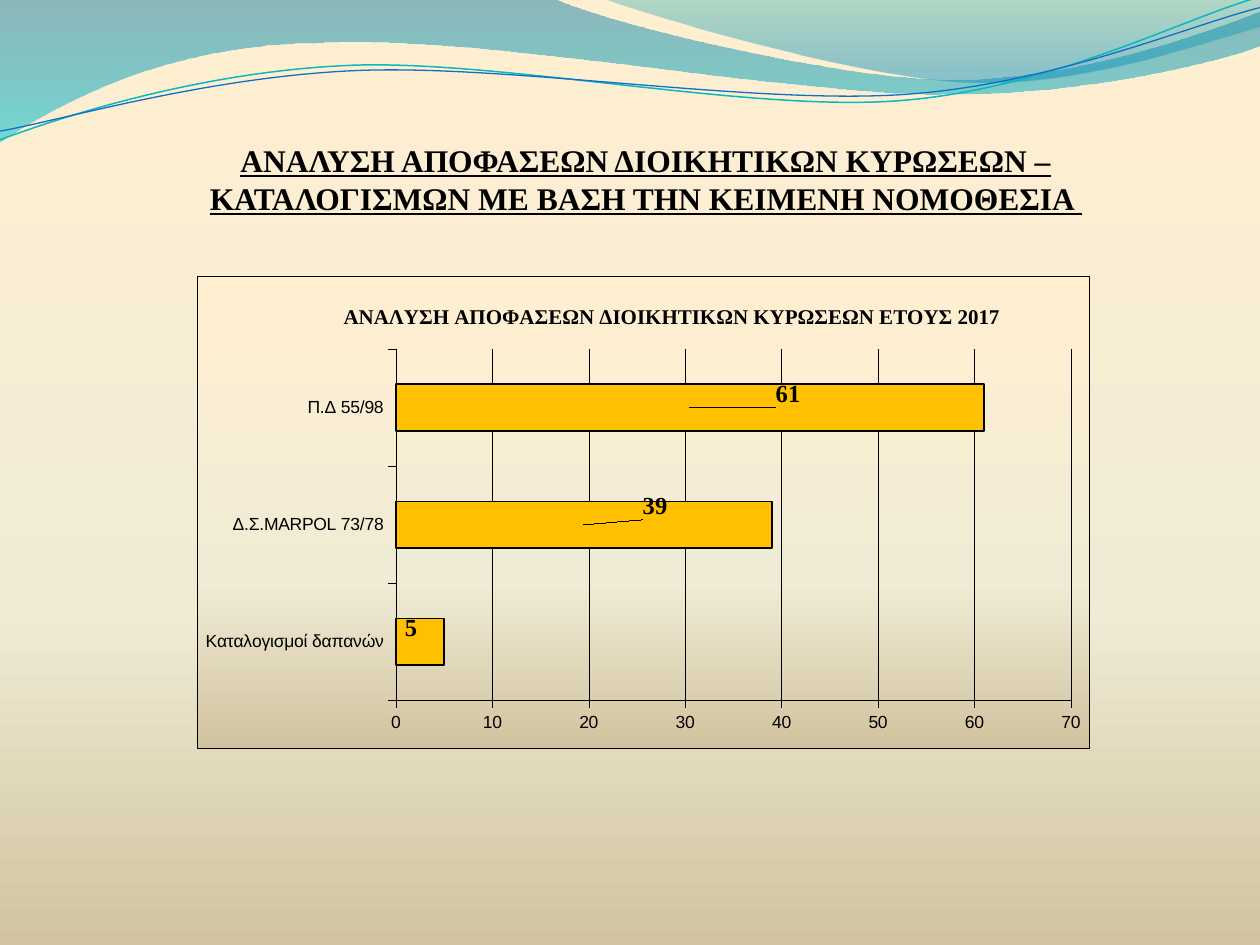
import dataclasses
import itertools
import typing

import lxml.etree
import pptx
import pptx.chart.chart
import pptx.chart.data
import pptx.dml.color
import pptx.enum.chart
import pptx.enum.text
import pptx.oxml
import pptx.oxml.ns
import pptx.slide
import pptx.util

Pt = pptx.util.Pt
qn = pptx.oxml.ns.qn


class Stop(typing.NamedTuple):
    position: int
    color: str
    opacity: int = 100


@dataclasses.dataclass(frozen=True)
class Theme:
    black: str = "000000"
    bar: str = "FFC000"
    paper: tuple = (Stop(0, "FFEFD1"), Stop(65, "F0EBD5"), Stop(100, "D1C39F"))
    teal: tuple = (Stop(0, "0074A1", 45), Stop(100, "00C6CF", 55))
    sea: tuple = (Stop(0, "00A1A9", 30), Stop(80, "008BBF", 45))
    serif: str = "Times New Roman"
    sans: str = "Arial"
    heading_size: int = 18
    label_size: int = 14
    chart_title_size: int = 12
    axis_size: int = 10
    hairline: float = 0.25


@dataclasses.dataclass(frozen=True)
class Wave:
    start: tuple
    steps: tuple
    gradient: tuple = ()
    line_color: str = ""
    line_width: float = 0


class Bar(typing.NamedTuple):
    category: str
    value: int
    label_x: float
    label_y: float


THEME = Theme()
WAVES = (
    Wave((0, -0.7), (
        (316.8, -0.7),
        (342.7, 12.2, 478.1, 45.4, 545.8, 45.4),
        (614.2, 45.4, 689.8, 18.7, 720, 6.5),
        (720.7, 25.9),
        (707.8, 31.7, 626.4, 54.7, 537.1, 54),
        (447.8, 54, 275, 20.2, 185, 24.5),
        (92.9, 25.2, 33.1, 59.8, -0.7, 81.4)), gradient=THEME.teal),
    Wave((344.9, -0.7), (
        (366.5, 7.9, 491, 44.6, 553.7, 46.8),
        (616.3, 49.7, 691.9, 23, 720, 15.1),
        (720, 0)), gradient=THEME.sea),
    Wave((0, 79.9), (
        (34.6, 67, 113.8, 41, 199.4, 37.4),
        (284.4, 33.8, 427, 64.1, 513.4, 57.6),
        (599.8, 51.1, 675.4, 10.8, 718.6, -1.4)), line_color="0AB8BF", line_width=0.85),
    Wave((0, 74.9), (
        (33.8, 69.1, 118.1, 43.9, 203.8, 40.3),
        (290.2, 36.7, 429.8, 59.8, 516.2, 54),
        (601.9, 48.2, 677.5, 15.1, 720, 4.3)), line_color="0F6FC6", line_width=0.75),
)
BARS = (
    Bar("Καταλογισμοί δαπανών", 5, -0.01, -0.03),
    Bar("Δ.Σ.MARPOL 73/78", 39, 0.08, -0.04),
    Bar("Π.Δ 55/98", 61, 0.11, -0.03),
)


def rgb(color: str) -> pptx.dml.color.RGBColor:
    """Turn a hex string into a colour."""
    return pptx.dml.color.RGBColor.from_string(color)


def format_font(font, size: float, name: str, bold: bool = False, underline: bool = False) -> None:
    """Apply black type of the given size and face."""
    font.size, font.name, font.bold, font.underline = Pt(size), name, bold, underline
    font.color.rgb = rgb(THEME.black)


def format_line(line, color: str, width: float) -> None:
    """Give a line its colour and width."""
    line.color.rgb = rgb(color)
    line.width = Pt(width)


def replace_fill(properties, stops: tuple) -> None:
    """Swap the empty fill of a properties element for a vertical gradient."""
    gradient = pptx.oxml.parse_xml(
        f'<a:gradFill {pptx.oxml.ns.nsdecls("a")} rotWithShape="1"><a:gsLst>'
        + "".join(
            f'<a:gs pos="{stop.position * 1000}"><a:srgbClr val="{stop.color}">'
            f'<a:alpha val="{stop.opacity * 1000}"/></a:srgbClr></a:gs>' for stop in stops)
        + '</a:gsLst><a:lin ang="5400000" scaled="0"/></a:gradFill>')
    properties.replace(properties.find(qn("a:noFill")), gradient)


def set_layout(parent, index: int, **values: typing.Union[str, float]) -> None:
    """Place a chart part by hand, as fractions of the chart area."""
    for existing in parent.findall(qn("c:layout")):
        parent.remove(existing)
    layout = pptx.oxml.parse_xml(f'<c:layout {pptx.oxml.ns.nsdecls("c")}><c:manualLayout/></c:layout>')
    for name, value in values.items():
        lxml.etree.SubElement(layout[0], qn(f"c:{name}")).set("val", str(value))
    parent.insert(index, layout)


def add_wave(slide: pptx.slide.Slide, wave: Wave) -> None:
    """Draw a curved band or line."""
    points = [(Pt(x), Pt(y)) for step in wave.steps for x, y in zip(step[::2], step[1::2])]
    builder = slide.shapes.build_freeform(Pt(wave.start[0]), Pt(wave.start[1]))
    builder.add_line_segments(points, close=bool(wave.gradient))
    shape = builder.convert_to_shape()
    shape.shadow.inherit = False
    segments = iter(list(shape._element.iter(qn("a:lnTo"))))
    for step in wave.steps:
        group = list(itertools.islice(segments, len(step) // 2))
        if len(group) == 3:
            curve = lxml.etree.Element(qn("a:cubicBezTo"))
            group[0].addprevious(curve)
            for segment in group:
                curve.append(segment[0])
                segment.getparent().remove(segment)
    shape.fill.background()
    if wave.gradient:
        replace_fill(shape._element.spPr, wave.gradient)
        shape.line.fill.background()
    else:
        format_line(shape.line, wave.line_color, wave.line_width)


def add_heading(slide: pptx.slide.Slide, text: str, **font_format) -> None:
    """Add the centred heading, resting on the bottom of its box."""
    frame = slide.shapes.add_textbox(Pt(65.5), Pt(55.4), Pt(607), Pt(68.4)).text_frame
    frame.word_wrap = True
    frame.vertical_anchor = pptx.enum.text.MSO_ANCHOR.BOTTOM
    frame.margin_left = frame.margin_right = frame.margin_bottom = 0
    paragraph = frame.paragraphs[0]
    paragraph.alignment = pptx.enum.text.PP_ALIGN.CENTER
    run = paragraph.add_run()
    run.text = text
    format_font(run.font, **font_format)


def format_chart_area(chart: pptx.chart.chart.Chart) -> None:
    """Give the chart its title, background, border and plot position."""
    format_font(chart.font, THEME.axis_size, THEME.sans)
    chart.has_legend = False
    chart.has_title = True
    paragraph = chart.chart_title.text_frame.paragraphs[0]
    run = paragraph.add_run()
    run.text = "ΑΝΑΛΥΣΗ ΑΠΟΦΑΣΕΩΝ ΔΙΟΙΚΗΤΙΚΩΝ ΚΥΡΩΣΕΩΝ ΕΤΟΥΣ 2017"
    format_font(run.font, THEME.chart_title_size, THEME.serif, bold=True)
    set_layout(chart.chart_title._element, 1, xMode="edge", yMode="edge", x=0.16, y=0.05)
    chart_element = chart._chartSpace.find(qn("c:chart"))
    set_layout(chart_element.find(qn("c:plotArea")), 0, layoutTarget="inner", xMode="edge",
               yMode="edge", x=0.223, y=0.155, w=0.757, h=0.744)
    area = pptx.oxml.parse_xml(
        f'<c:spPr {pptx.oxml.ns.nsdecls("c", "a")}><a:noFill/><a:ln w="{Pt(THEME.hairline)}">'
        f'<a:solidFill><a:srgbClr val="{THEME.black}"/></a:solidFill></a:ln></c:spPr>')
    replace_fill(area, THEME.paper)
    chart_element.addnext(area)


def add_decisions_chart(slide: pptx.slide.Slide) -> None:
    """Add the bar chart of decisions."""
    data = pptx.chart.data.CategoryChartData()
    data.categories = [bar.category for bar in BARS]
    data.add_series("Series 1", [bar.value for bar in BARS])
    chart = slide.shapes.add_chart(pptx.enum.chart.XL_CHART_TYPE.BAR_CLUSTERED, Pt(112.5), Pt(157.7),
                                   Pt(509.8), Pt(270), data).chart
    format_chart_area(chart)
    for axis in (chart.category_axis, chart.value_axis):
        axis.major_tick_mark = pptx.enum.chart.XL_TICK_MARK.OUTSIDE
        axis.tick_label_position = pptx.enum.chart.XL_TICK_LABEL_POSITION.LOW
        format_font(axis.tick_labels.font, THEME.axis_size, THEME.sans)
        format_line(axis.format.line, THEME.black, THEME.hairline)
    chart.value_axis.minimum_scale, chart.value_axis.maximum_scale = 0, 70
    chart.value_axis.major_unit = 10
    format_line(chart.value_axis.major_gridlines.format.line, THEME.black, THEME.hairline)
    plot = chart.plots[0]
    plot.vary_by_categories, plot.gap_width = False, 150
    series = plot.series[0]
    series.format.fill.solid()
    series.format.fill.fore_color.rgb = rgb(THEME.bar)
    format_line(series.format.line, THEME.black, 1)
    series.data_labels.show_value = True
    format_font(series.data_labels.font, THEME.label_size, THEME.serif, bold=True)
    for index, bar in enumerate(BARS):
        label = series.points[index].data_label
        format_font(label.font, THEME.label_size, THEME.serif, bold=True)
        label.position = pptx.enum.chart.XL_LABEL_POSITION.CENTER
        set_layout(series.data_labels._element.findall(qn("c:dLbl"))[index], 1,
                   x=bar.label_x, y=bar.label_y)


def main() -> None:
    """Build and save the slide."""
    presentation = pptx.Presentation()
    presentation.slide_width, presentation.slide_height = Pt(720), Pt(540)
    slide = presentation.slides.add_slide(presentation.slide_layouts[6])
    slide.background.fill.background()
    replace_fill(next(slide._element.iter(qn("p:bgPr"))), THEME.paper)
    for wave in WAVES:
        add_wave(slide, wave)
    add_heading(slide, "ΑΝΑΛΥΣΗ ΑΠΟΦΑΣΕΩΝ ΔΙΟΙΚΗΤΙΚΩΝ ΚΥΡΩΣΕΩΝ – ΚΑΤΑΛΟΓΙΣΜΩΝ ΜΕ ΒΑΣΗ ΤΗΝ ΚΕΙΜΕΝΗ ΝΟΜΟΘΕΣΙΑ ",
                size=THEME.heading_size, name=THEME.serif, bold=True, underline=True)
    add_decisions_chart(slide)
    presentation.save("out.pptx")


if __name__ == "__main__":
    main()
